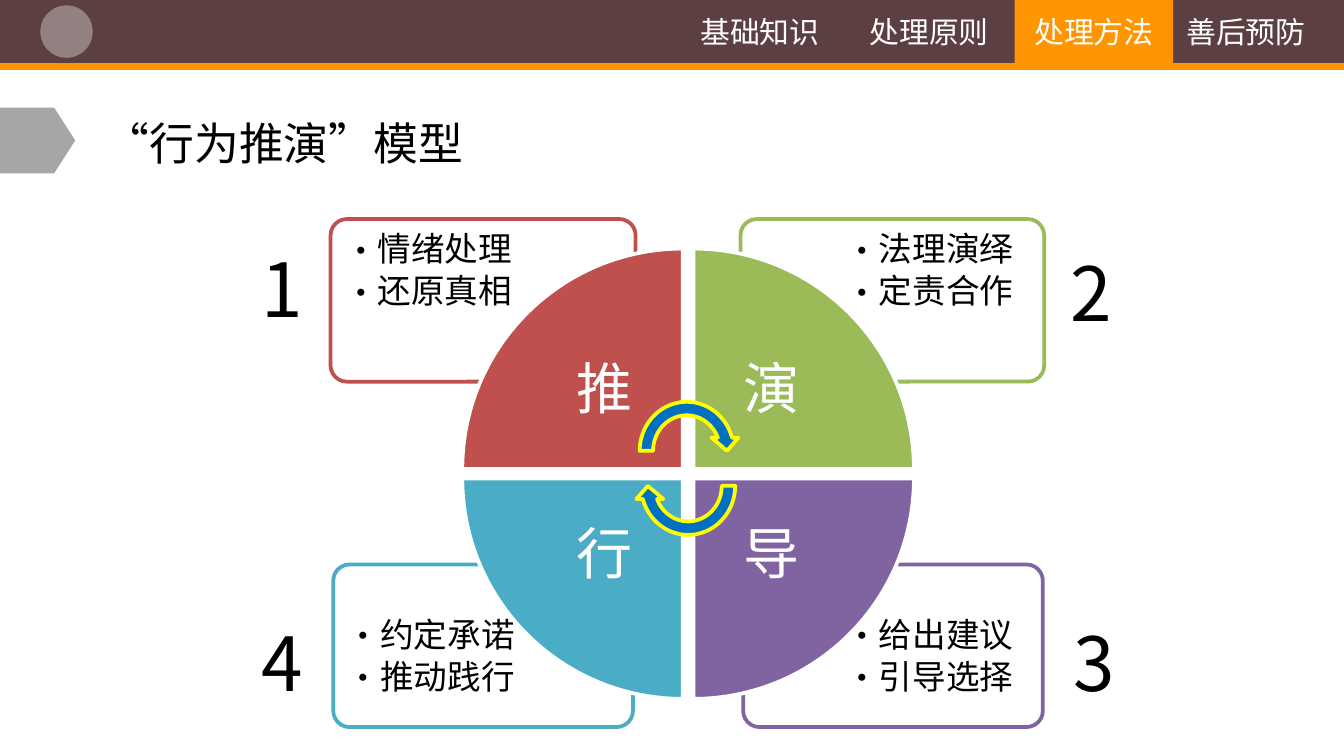
from lxml import etree
from pptx import Presentation
from pptx.dml.color import RGBColor
from pptx.enum.shapes import MSO_SHAPE
from pptx.enum.text import MSO_ANCHOR, MSO_AUTO_SIZE, PP_ALIGN
from pptx.oxml.ns import qn
from pptx.util import Inches, Pt

FONT = "Noto Sans CJK SC"
WHITE = RGBColor(0xFF, 0xFF, 0xFF)
BLACK = RGBColor(0x00, 0x00, 0x00)
RED = RGBColor(0xC0, 0x50, 0x4D)
GREEN = RGBColor(0x9B, 0xBB, 0x59)
PURPLE = RGBColor(0x80, 0x64, 0xA2)
TEAL = RGBColor(0x4B, 0xAC, 0xC6)
BLUE = RGBColor(0x00, 0x70, 0xC0)
YELLOW = RGBColor(0xFF, 0xFF, 0x00)
BROWN = RGBColor(0x5C, 0x3F, 0x41)
ORANGE = RGBColor(0xFF, 0x95, 0x00)
GRAY = RGBColor(0xA6, 0xA6, 0xA6)

RECTANGLE = MSO_SHAPE.RECTANGLE
ROUNDED = MSO_SHAPE.ROUNDED_RECTANGLE
WEDGE = MSO_SHAPE.PIE_WEDGE
CIRCULAR_ARROW = MSO_SHAPE.CIRCULAR_ARROW
OVAL = MSO_SHAPE.OVAL
PENTAGON = MSO_SHAPE.PENTAGON
LEFT, CENTER = PP_ALIGN.LEFT, PP_ALIGN.CENTER
TOP, MIDDLE = MSO_ANCHOR.TOP, MSO_ANCHOR.MIDDLE
FIT_SHAPE = MSO_AUTO_SIZE.SHAPE_TO_FIT_TEXT

presentation = Presentation()
presentation.slide_width = Inches(10)
presentation.slide_height = Inches(10) * 9 // 16
slide = presentation.slides.add_slide(presentation.slide_layouts[6])


def add_shape(kind, box, fill, line=None, opacity=None, rotation=0, adjustment=None):
    shape = slide.shapes.add_shape(kind, *map(Inches, box))
    shape.shadow.inherit = False
    shape.rotation = rotation
    shape.fill.solid()
    shape.fill.fore_color.rgb = fill
    if opacity is not None:
        color = shape.fill._xPr.find(qn("a:solidFill"))[0]
        etree.SubElement(color, qn("a:alpha"), val=str(opacity * 1000))
    if line is None:
        shape.line.fill.background()
    else:
        shape.line.color.rgb = line
        shape.line.width = Pt(2)
    if adjustment is not None:
        shape.adjustments[0] = adjustment
    return shape


def add_text(text, box, size, color=BLACK, fill=None, align=LEFT, anchor=TOP,
             inset=None, spacing=None, after=None, bullet=False, wrap=True):
    """Add one paragraph per line of text, in a rectangle if a fill is given."""
    if fill is None:
        holder = slide.shapes.add_textbox(*map(Inches, box))
    else:
        holder = add_shape(RECTANGLE, box, fill)
    frame = holder.text_frame
    frame.word_wrap = wrap
    if not wrap:
        frame.auto_size = FIT_SHAPE
    frame.vertical_anchor = anchor
    if inset is not None:
        frame.margin_left = frame.margin_right = Inches(inset)
        frame.margin_top = frame.margin_bottom = Inches(inset)
    frame.text = text
    for paragraph in frame.paragraphs:
        paragraph.alignment = align
        paragraph.line_spacing = spacing
        paragraph.space_after = after
        font = paragraph.runs[0].font
        font.size = Pt(size)
        font.name = FONT
        font.color.rgb = color
        run_properties = paragraph.runs[0]._r.get_or_add_rPr()
        etree.SubElement(run_properties, qn("a:ea"), typeface=FONT)
        if bullet:
            properties = paragraph._p.get_or_add_pPr()
            properties.set("marL", str(Inches(0.19)))
            properties.set("indent", str(Inches(-0.19)))
            etree.SubElement(properties, qn("a:buFont"), typeface=FONT)
            etree.SubElement(properties, qn("a:buChar"), char="•")


add_text("“行为推演”模型", (0.68, 0.78, 3.48, 0.56), 24, anchor=MIDDLE)

# Cards behind the wheel: outline colour, box, text left and top, lines
cards = [
    (PURPLE, (5.53, 4.2, 2.23, 1.21), (6.22, 4.53), "给出建议\n引导选择"),
    (TEAL, (2.48, 4.2, 2.23, 1.21), (2.51, 4.53), "约定承诺\n推动践行"),
    (GREEN, (5.51, 1.63, 2.26, 1.21), (6.22, 1.66), "法理演绎\n定责合作"),
    (RED, (2.46, 1.63, 2.27, 1.21), (2.49, 1.66), "情绪处理\n还原真相"),
]
for color, box, corner, lines in cards:
    add_shape(ROUNDED, box, WHITE, line=color, opacity=90, adjustment=0.1)
    add_text(lines, (*corner, 1.52, 0.85), 18, inset=0.07, spacing=0.9,
             after=Pt(3), bullet=True)

# Wheel quarters, clockwise from the top left
WEDGE_SIZE, LABEL_SIZE = 1.64, 1.16
quarters = [
    ("推", RED, 3.44, 1.85),
    ("演", GREEN, 5.16, 1.85),
    ("导", PURPLE, 5.16, 3.56),
    ("行", TEAL, 3.44, 3.56),
]
for index, (label, color, left, top) in enumerate(quarters):
    add_shape(WEDGE, (left, top, WEDGE_SIZE, WEDGE_SIZE), color, line=WHITE,
              rotation=90 * index)
    # Labels sit in the corner nearest the centre of the wheel
    label_left = left + (WEDGE_SIZE - LABEL_SIZE if index in (0, 3) else 0)
    label_top = top + (WEDGE_SIZE - LABEL_SIZE if index < 2 else 0)
    add_text(label, (label_left, label_top, LABEL_SIZE, LABEL_SIZE), 30, WHITE,
             align=CENTER, anchor=MIDDLE, inset=0.23, spacing=0.9)

for left, top, rotation in [(4.71, 2.94, 0), (4.72, 3.2, 180)]:
    add_shape(CIRCULAR_ARROW, (left, top, 0.8, 0.83), BLUE, line=YELLOW,
              rotation=rotation)

# Navigation bar with the current section highlighted
BAR_HEIGHT = 0.47
add_shape(RECTANGLE, (0, 0, 10, BAR_HEIGHT), BROWN)
add_shape(RECTANGLE, (0, BAR_HEIGHT, 10.02, 0.05), ORANGE)
sections = [
    ("基础知识", 5.03, 1.25, None),
    ("善后预防", 8.71, 1.12, None),
    ("处理方法", 7.55, 1.18, ORANGE),
    ("处理原则", 6.28, 1.27, None),
]
for name, left, width, highlight in sections:
    add_text(name, (left, 0, width, BAR_HEIGHT), 16, WHITE, fill=highlight,
             align=CENTER, anchor=MIDDLE)

add_shape(OVAL, (0.3, 0.04, 0.39, 0.39), WHITE, opacity=34)
add_shape(PENTAGON, (0, 0.8, 0.56, 0.49), GRAY, adjustment=0.32)

numbers = [("1", 1.85, 1.76), ("3", 7.89, 4.54), ("4", 1.85, 4.54), ("2", 7.87, 1.79)]
for number, left, top in numbers:
    add_text(number, (left, top, 0.53, 0.77), 40, wrap=False)

presentation.save("out.pptx")
